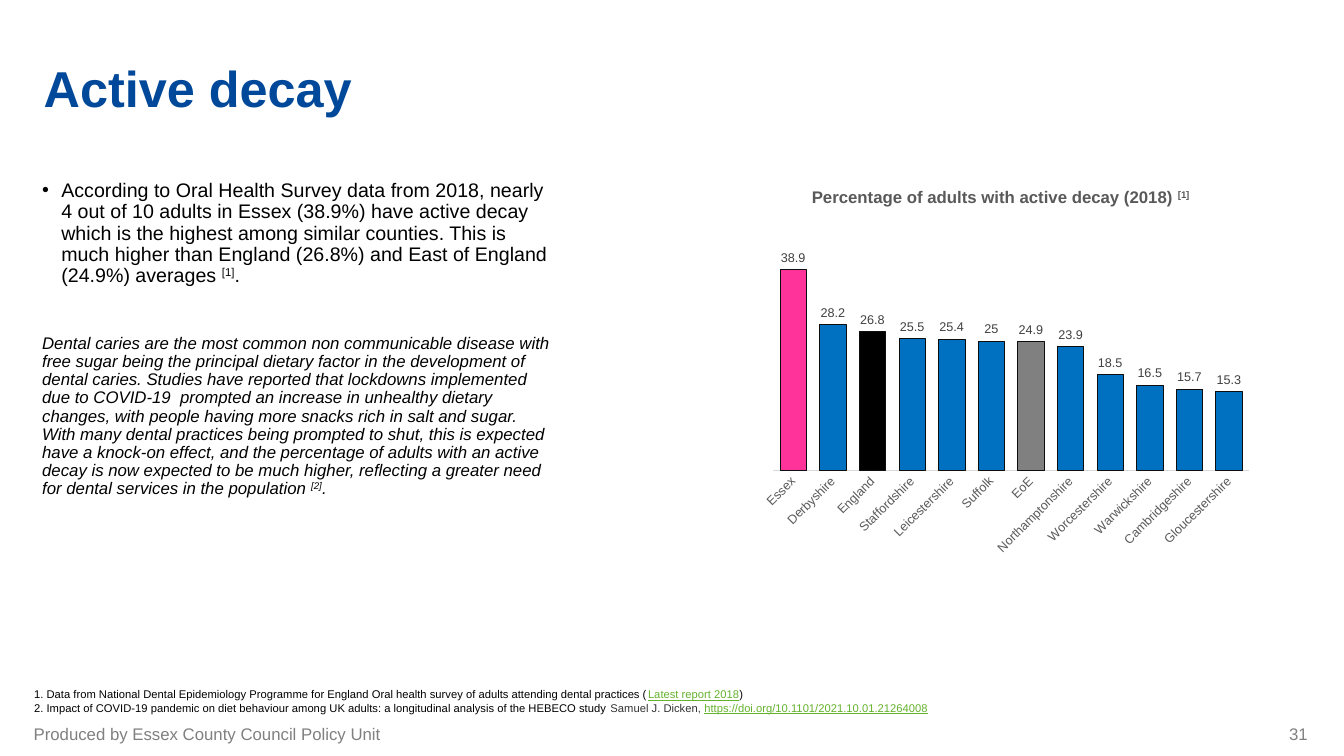
from lxml.etree import SubElement
from pptx import Presentation
from pptx.chart.data import CategoryChartData
from pptx.dml.color import RGBColor
from pptx.enum.chart import XL_CHART_TYPE, XL_LABEL_POSITION, XL_TICK_MARK
from pptx.enum.text import MSO_ANCHOR, PP_ALIGN
from pptx.oxml import parse_xml
from pptx.oxml.ns import nsdecls, qn
from pptx.util import Inches, Pt

NAVY = RGBColor(0x00, 0x48, 0x99)
BLUE = RGBColor(0x00, 0x70, 0xC0)
PINK = RGBColor(0xFF, 0x33, 0x99)
GREEN = RGBColor(0x65, 0xB2, 0x2E)
BLACK = RGBColor(0x00, 0x00, 0x00)
OUTLINE = RGBColor(0x0D, 0x0D, 0x0D)
INK = RGBColor(0x33, 0x33, 0x33)
LABEL = RGBColor(0x40, 0x40, 0x40)
SLATE = RGBColor(0x59, 0x59, 0x59)
GREY = RGBColor(0x80, 0x80, 0x80)
PALE = RGBColor(0xD9, 0xD9, 0xD9)

DECAY_RATES = {
    "Essex": 38.9, "Derbyshire": 28.2, "England": 26.8, "Staffordshire": 25.5,
    "Leicestershire": 25.4, "Suffolk": 25, "EoE": 24.9, "Northamptonshire": 23.9,
    "Worcestershire": 18.5, "Warwickshire": 16.5, "Cambridgeshire": 15.7,
    "Gloucestershire": 15.3,
}
HIGHLIGHTS = {"Essex": PINK, "England": BLACK, "EoE": GREY}
PLOT_AREA = {"x": 0.07, "y": 0.15, "w": 0.9, "h": 0.51}


class DecaySlide:
    FONT = "Arial"
    GRID = 100

    def __init__(self, deck):
        self.column = deck.slide_width / self.GRID
        self.row = deck.slide_height / self.GRID
        self.slide = deck.slides.add_slide(deck.slide_layouts[5])

    def place(self, left, top, width, height):
        return (round(left * self.column), round(top * self.row),
                round(width * self.column), round(height * self.row))

    def style(self, font, size, color, bold=False):
        font.name = self.FONT
        font.size = Pt(size)
        font.bold = bold
        font.color.rgb = color

    def runs(self, paragraph, pieces, size, bold=False, italic=False):
        for words, color, *marks in pieces:
            run = paragraph.add_run()
            run.text = words
            self.style(run.font, size, color, bold)
            run.font.italic = italic
            if "link" in marks:
                run.font.underline = True
            if "super" in marks:
                run.font._element.set("baseline", "30000")

    def frame(self, holder, anchor, insets):
        frame = holder.text_frame
        frame.word_wrap = True
        frame.vertical_anchor = anchor
        (frame.margin_left, frame.margin_top,
         frame.margin_right, frame.margin_bottom) = map(Inches, insets)
        return frame

    def title(self, words, area):
        heading = self.slide.shapes.title
        heading.left, heading.top, heading.width, heading.height = self.place(*area)
        frame = self.frame(heading, MSO_ANCHOR.BOTTOM, (0.1, 0.05, 0.1, 0))
        paragraph = frame.paragraphs[0]
        paragraph.alignment = PP_ALIGN.LEFT
        paragraph.line_spacing = 0.9
        self.runs(paragraph, [(words, NAVY)], 36, bold=True)

    def text(self, area, anchor=MSO_ANCHOR.TOP, insets=(0.1, 0.05, 0.1, 0.05)):
        box = self.slide.shapes.add_textbox(*self.place(*area))
        return self.frame(box, anchor, insets)

    def lines(self, area, paragraphs, size, align=PP_ALIGN.LEFT, **layout):
        frame = self.text(area, **layout)
        for index, pieces in enumerate(paragraphs):
            paragraph = frame.add_paragraph() if index else frame.paragraphs[0]
            paragraph.alignment = align
            self.runs(paragraph, pieces, size)

    def findings(self, area, finding, outlook):
        frame = self.text(area, insets=(0.1, 0.48, 0.1, 0.05))
        bullet = frame.paragraphs[0]
        bullet.line_spacing = 0.9
        self.runs(bullet, finding, 14)
        properties = bullet._p.get_or_add_pPr()
        properties.set("marL", str(Inches(0.19)))
        properties.set("indent", str(Inches(-0.19)))
        SubElement(properties, qn("a:buFont"), typeface=self.FONT)
        SubElement(properties, qn("a:buChar"), char="•")
        closing = frame.add_paragraph()
        closing.line_spacing = 0.9
        closing.space_before = Pt(34.5)
        self.runs(closing, outlook, 12, italic=True)

    def column_chart(self, area, heading, rates, highlights):
        data = CategoryChartData()
        data.categories = list(rates)
        data.add_series("Series 1", list(rates.values()))
        chart = self.slide.shapes.add_chart(
            XL_CHART_TYPE.COLUMN_CLUSTERED, *self.place(*area), data).chart
        self.style(chart.font, 10, BLACK)
        chart.has_legend = False
        chart.has_title = True
        self.runs(chart.chart_title.text_frame.paragraphs[0], heading, 12, bold=True)

        rate_axis = chart.value_axis
        rate_axis.visible = False
        rate_axis.has_major_gridlines = False
        rate_axis.minimum_scale, rate_axis.maximum_scale = 0, 45
        county_axis = chart.category_axis
        county_axis.major_tick_mark = XL_TICK_MARK.NONE
        county_axis.format.line.color.rgb = PALE
        county_axis.format.line.width = Pt(0.75)
        self.style(county_axis.tick_labels.font, 9, SLATE)
        for body in chart.element.xpath(".//c:catAx/c:txPr/a:bodyPr"):
            body.set("rot", "-2700000")
            body.set("vert", "horz")

        plot = chart.plots[0]
        plot.gap_width, plot.overlap = 50, -27
        plot.vary_by_categories = False
        series = plot.series[0]
        self.paint(series, BLUE)
        for index, county in enumerate(rates):
            if county in highlights:
                self.paint(series.points[index], highlights[county])
        labels = series.data_labels
        labels.show_value = True
        labels.position = XL_LABEL_POSITION.OUTSIDE_END
        self.style(labels.font, 9, LABEL)
        self.fix_plot(chart)

    def paint(self, bars, color):
        bars.format.fill.solid()
        bars.format.fill.fore_color.rgb = color
        bars.format.line.color.rgb = OUTLINE
        bars.format.line.width = Pt(0.5)

    def fix_plot(self, chart):
        plot_area = chart.element.xpath(".//c:plotArea")[0]
        for automatic in plot_area.findall(qn("c:layout")):
            plot_area.remove(automatic)
        modes = '<c:xMode val="edge"/><c:yMode val="edge"/>'
        sizes = "".join(f'<c:{key} val="{share}"/>' for key, share in PLOT_AREA.items())
        plot_area.insert(0, parse_xml(
            f'<c:layout {nsdecls("c")}><c:manualLayout><c:layoutTarget val="inner"/>'
            f"{modes}{sizes}</c:manualLayout></c:layout>"))


def main():
    deck = Presentation()
    deck.slide_width, deck.slide_height = Inches(13.33), Inches(7.5)
    page = DecaySlide(deck)
    page.title("Active decay", (2.5, 3.7, 94.7, 12))
    page.findings(
        (2.4, 17.5, 39.3, 71.7),
        [("According to Oral Health Survey data from 2018, nearly 4 out of 10 adults in "
          "Essex (38.9%) have active decay which is the highest among similar counties. "
          "This is much higher than England (26.8%) and East of England (24.9%) "
          "averages ", BLACK),
         ("[1]", BLACK, "super"), (".", BLACK)],
        [("Dental caries are the most common non communicable disease with free sugar "
          "being the principal dietary factor in the development of dental caries. "
          "Studies have reported that lockdowns implemented due to COVID-19  prompted "
          "an increase in unhealthy dietary changes, with people having more snacks "
          "rich in salt and sugar. With many dental practices being prompted to shut, "
          "this is expected have a knock-on effect, and the percentage of adults with "
          "an active decay is now expected to be much higher, reflecting a greater "
          "need for dental services in the population ", BLACK),
         ("[2]", BLACK, "super"), (".", BLACK)])
    page.column_chart(
        (54.8, 22.4, 39.3, 60.3),
        [("Percentage of adults with active decay (2018) ", SLATE), ("[1]", SLATE, "super")],
        DECAY_RATES, HIGHLIGHTS)
    page.lines((1.8, 90.3, 79.9, 4.9), [
        [("1. Data from National Dental Epidemiology Programme for England Oral health "
          "survey of adults attending dental practices (", BLACK),
         ("Latest report 2018", GREEN, "link"), (")", BLACK)],
        [("2. Impact of COVID-19 pandemic on diet behaviour among UK adults: a "
          "longitudinal analysis of the HEBECO study ", BLACK),
         ("Samuel J. Dicken, ", INK),
         ("https://doi.org/10.1101/2021.10.01.21264008", GREEN, "link")]], 8)
    page.lines((2.5, 96.1, 47.3, 2), [[("Produced by Essex County Council Policy Unit", GREY)]],
               12, anchor=MSO_ANCHOR.MIDDLE, insets=(0, 0.05, 0.1, 0.05))
    page.lines((90.9, 96.1, 6.4, 2), [[("31", GREY)]], 12, align=PP_ALIGN.RIGHT,
               anchor=MSO_ANCHOR.MIDDLE, insets=(0.1, 0.05, 0, 0.05))
    deck.save("out.pptx")


if __name__ == "__main__":
    main()
